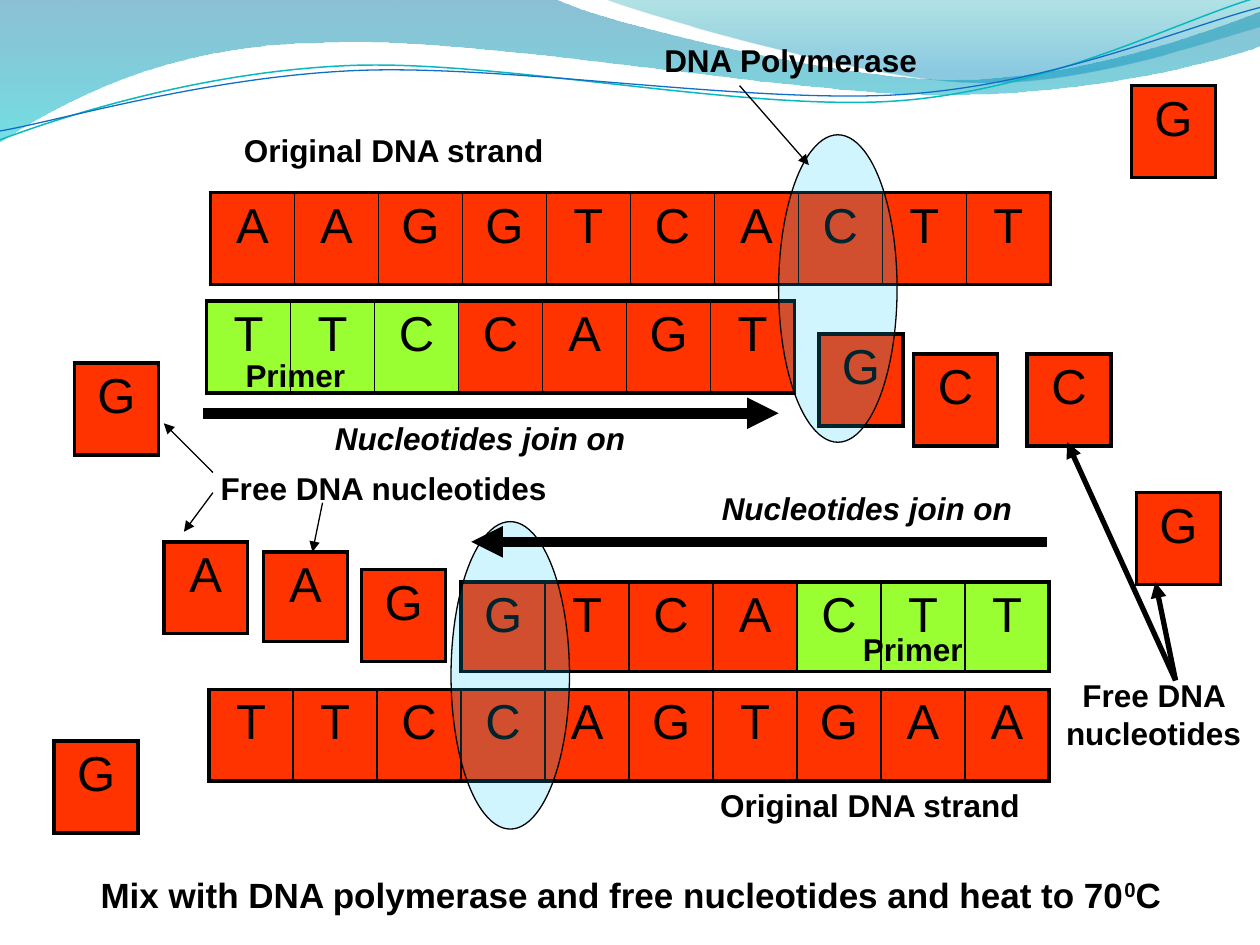
from math import cos, radians, sin

from pptx import Presentation
from pptx.dml.color import RGBColor
from pptx.enum.shapes import MSO_CONNECTOR, MSO_SHAPE
from pptx.enum.text import PP_ALIGN
from pptx.oxml.ns import qn
from pptx.oxml.xmlchemy import OxmlElement
from pptx.util import Inches, Pt

BLACK = RGBColor(0x00, 0x00, 0x00)
RED = RGBColor(0xFF, 0x33, 0x00)
GREEN = RGBColor(0x99, 0xFF, 0x33)
ENZYME_BLUE = RGBColor(0x00, 0xCC, 0xFF)
DEEP_BLUE = RGBColor(0x00, 0x74, 0xA1)
CYAN = RGBColor(0x00, 0xC6, 0xCF)
TEAL = RGBColor(0x00, 0xA1, 0xA9)
MID_BLUE = RGBColor(0x00, 0x8B, 0xBF)
LINE_TEAL = RGBColor(0x0A, 0xB8, 0xBF)
LINE_BLUE = RGBColor(0x0F, 0x6F, 0xC6)

FONT = "Arial"
CELL_W = Inches(2) // 3
CELL_H = 0.73
THICK, THIN = 2.25, 1
TILT = 2.7


def add_child(parent, tag, **attrs):
    child = OxmlElement(tag)
    for name, value in attrs.items():
        child.set(name, str(value))
    parent.append(child)
    return child


def set_opacity(sp, *percents):
    colours = sp._element.spPr.iter(qn("a:srgbClr"))
    for colour, percent in zip(colours, percents):
        add_child(colour, "a:alpha", val=percent * 1000)


def add_run(p, text, size, bold=False, italic=False):
    r = p.add_run()
    r.text = text
    r.font.name = FONT
    r.font.size = Pt(size)
    r.font.bold = bold
    r.font.italic = italic
    r.font.color.rgb = BLACK
    return r


def add_outline(s, start, segments, close):
    """One point makes a straight segment, three make a Bezier segment."""
    fb = s.shapes.build_freeform(Inches(start[0]), Inches(start[1]))
    fb.add_line_segments([(Inches(x), Inches(y))
                          for seg in segments for x, y in seg], close=close)
    sp = fb.convert_to_shape()
    sp.shadow.inherit = False
    # Join the control points of each curve into one Bezier element
    steps = iter(list(sp._element.spPr.iter(qn("a:lnTo"))))
    for seg in segments:
        group = [next(steps) for _ in seg]
        if len(group) == 3:
            curve = OxmlElement("a:cubicBezTo")
            group[0].addprevious(curve)
            for step in group:
                curve.append(step[0])
                step.getparent().remove(step)
    return sp


def add_wave(s, start, segments, stops):
    sp = add_outline(s, start, segments, True)
    sp.line.fill.background()
    sp.fill.gradient()
    sp.fill.gradient_angle = 270
    for stop, (position, colour, _) in zip(sp.fill.gradient_stops, stops):
        stop.position = position
        stop.color.rgb = colour
    set_opacity(sp, *(opacity for _, _, opacity in stops))


def add_wave_line(s, start, segments, centre, colour, width):
    """A level curve turned about its centre by the tilt."""
    c, d = cos(radians(TILT)), sin(radians(TILT))

    def level(point):
        x, y = point[0] - centre[0], point[1] - centre[1]
        return centre[0] + x * c - y * d, centre[1] + x * d + y * c

    sp = add_outline(s, level(start),
                     [[level(pt) for pt in seg] for seg in segments], False)
    sp.rotation = 360 - TILT
    sp.fill.background()
    sp.line.color.rgb = colour
    sp.line.width = Pt(width)


def set_border(cell, side, width):
    ln = add_child(cell._tc.get_or_add_tcPr(), "a:ln" + side, w=Pt(width))
    add_child(add_child(ln, "a:solidFill"), "a:srgbClr", val=BLACK)


def add_strand(s, bases, left, top, primer=(), height=CELL_H):
    """A row of nucleotides; the columns listed in primer are green."""
    n = len(bases)
    tbl = s.shapes.add_table(1, n, Inches(left), Inches(top),
                             CELL_W * n, Inches(height)).table
    tbl.first_row = tbl.horz_banding = False
    for i, base in enumerate(bases):
        tbl.columns[i].width = CELL_W
        cell = tbl.cell(0, i)
        set_border(cell, "L", THICK if i == 0 else THIN)
        set_border(cell, "R", THICK if i == n - 1 else THIN)
        set_border(cell, "T", THICK)
        set_border(cell, "B", THICK)
        cell.fill.solid()
        cell.fill.fore_color.rgb = GREEN if i in primer else RED
        p = cell.text_frame.paragraphs[0]
        p.alignment = PP_ALIGN.CENTER
        add_run(p, base, 28)


def add_polymerase(s, left, top):
    sp = s.shapes.add_shape(MSO_SHAPE.OVAL, Inches(left), Inches(top),
                            Inches(0.94), Inches(2.44))
    sp.shadow.inherit = False
    sp.fill.solid()
    sp.fill.fore_color.rgb = ENZYME_BLUE
    set_opacity(sp, 18)
    sp.line.color.rgb = BLACK
    sp.line.width = Pt(0.75)


def add_arrow(s, start, end, width=0.75):
    cx = s.shapes.add_connector(MSO_CONNECTOR.STRAIGHT,
                                *map(Inches, start + end))
    cx.line.color.rgb = BLACK
    cx.line.width = Pt(width)
    add_child(cx.line._get_or_add_ln(), "a:tailEnd", type="triangle")
    add_child(cx._element.spPr, "a:effectLst")


def add_label(s, text, left, top, width=2.87, height=0.4, size=18,
              italic=False, align=PP_ALIGN.CENTER):
    tf = s.shapes.add_textbox(Inches(left), Inches(top), Inches(width),
                              Inches(height)).text_frame
    tf.word_wrap = True
    p = tf.paragraphs[0]
    p.alignment = align
    add_run(p, text, size, True, italic)
    return p


def add_background(s):
    add_wave(s, (0, -0.01), [
        [(4.4, -0.01)],
        [(4.76, 0.17), (6.64, 0.63), (7.58, 0.63)],
        [(8.53, 0.63), (9.58, 0.26), (10, 0.09)],
        [(10.01, 0.36)],
        [(9.83, 0.44), (8.7, 0.76), (7.46, 0.75)],
        [(6.22, 0.75), (3.82, 0.28), (2.57, 0.34)],
        [(1.29, 0.35), (0.46, 0.83), (-0.01, 1.13)],
    ], [(0, DEEP_BLUE, 45), (1, CYAN, 55)])
    add_wave(s, (4.79, -0.01), [
        [(5.09, 0.11), (6.82, 0.62), (7.69, 0.65)],
        [(8.56, 0.69), (9.61, 0.32), (10, 0.21)],
        [(10, 0)],
    ], [(0, TEAL, 30), (0.8, MID_BLUE, 45)])
    add_wave_line(s, (0, 1.11), [
        [(0.48, 0.93), (1.58, 0.57), (2.77, 0.52)],
        [(3.95, 0.47), (5.93, 0.89), (7.13, 0.8)],
        [(8.33, 0.71), (9.38, 0.15), (9.98, -0.02)],
    ], (4.99, 0.57), LINE_TEAL, 0.85)
    add_wave_line(s, (0, 1.04), [
        [(0.47, 0.96), (1.64, 0.61), (2.83, 0.56)],
        [(4.03, 0.51), (5.97, 0.83), (7.17, 0.75)],
        [(8.36, 0.67), (9.41, 0.21), (10, 0.06)],
    ], (5, 0.59), LINE_BLUE, 0.75)


def main():
    prs = Presentation()
    prs.slide_width, prs.slide_height = Inches(10), Inches(7.5)
    s = prs.slides.add_slide(prs.slide_layouts[6])
    add_background(s)

    # Original strands and the new strands growing from their primers
    add_strand(s, "AAGGTCACTT", 1.67, 1.53)
    add_strand(s, "TTCCAGTGAA", 1.66, 5.47)
    add_strand(s, "TTCCAGT", 1.64, 2.39, primer=range(3))
    add_strand(s, "GTCACTT", 3.66, 4.62, primer=range(4, 7), height=0.71)

    # Free nucleotides
    for base, left, top in [
            ("G", 6.5, 2.65), ("C", 7.25, 2.81), ("C", 8.15, 2.81),
            ("A", 1.3, 4.3), ("G", 2.87, 4.52), ("G", 9.02, 3.91),
            ("G", 8.98, 0.68), ("G", 0.59, 2.88), ("G", 0.43, 5.88)]:
        add_strand(s, base, left, top)
    add_strand(s, "A", 2.09, 4.38, height=0.71)

    # Polymerase enzymes
    add_polymerase(s, 6.18, 1.07)
    add_polymerase(s, 3.58, 4.14)

    # Pointers, then the two directions of growth
    for end in [(9.17, 4.62), (8.47, 3.51)]:
        add_arrow(s, (9.33, 5.4), end, 3)
    add_arrow(s, (5.87, 0.68), (6.42, 1.31))
    add_arrow(s, (1.69, 3.75), (1.3, 3.36))
    add_arrow(s, (2.56, 3.99), (2.48, 4.38))
    add_arrow(s, (1.69, 3.91), (1.46, 4.22))
    add_arrow(s, (8.31, 4.3), (3.74, 4.3), 6)
    add_arrow(s, (1.61, 3.28), (6.18, 3.28), 6)

    # Labels
    add_label(s, "Free DNA nucleotides", 8.31, 5.32, 1.69, 0.7)
    add_label(s, "Free DNA nucleotides", 1.61, 3.67)
    add_label(s, "DNA Polymerase", 4.84, 0.28)
    for left, top in [(5.47, 6.19), (1.69, 0.99)]:
        add_label(s, "Original DNA strand", left, top)
    for left, top in [(6.36, 4.95), (1.46, 2.78)]:
        add_label(s, "Primer", left, top, 1.77)
    for left, top in [(5.63, 3.83), (2.56, 3.28)]:
        add_label(s, "Nucleotides join on", left, top, 2.52, italic=True,
                  align=PP_ALIGN.LEFT)

    # Instruction
    p = add_label(s, "Mix with DNA polymerase and free nucleotides and heat to 70",
                  0.7, 6.88, 8.67, 0.44, size=20, align=PP_ALIGN.LEFT)
    r = add_run(p, "0", 20, True)
    r.font._element.set("baseline", "30000")
    add_run(p, "C", 20, True)

    prs.save("out.pptx")


if __name__ == "__main__":
    main()
